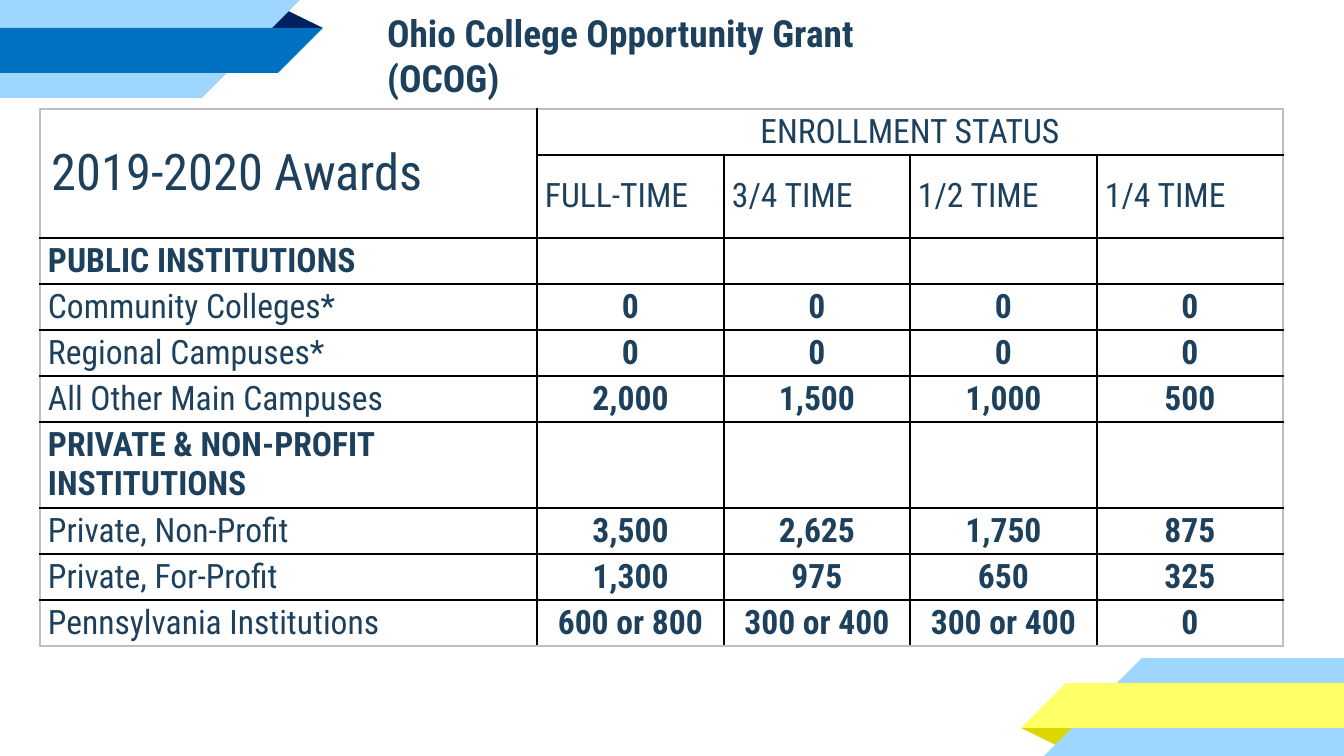
"""Build the Ohio College Opportunity Grant award slide."""
from typing import Any, NamedTuple

import lxml.etree
import pptx
import pptx.dml.color
import pptx.enum.shapes
import pptx.enum.text
import pptx.oxml.ns
import pptx.util

WIDE, HIGH = 1344, 756
SCALE = 9144000 / WIDE
FACE = "Roboto Condensed"
HUES = {"ink": "1D405D", "sky": "9FD6FF", "blue": "0070C0", "navy": "002060",
        "yellow": "FFFF66", "olive": "DBD600", "line": "000000", "edge": "BFBFBF"}
KIND = pptx.enum.shapes.MSO_SHAPE
ALIGN = pptx.enum.text.PP_ALIGN
MIDDLE = pptx.enum.text.MSO_ANCHOR.MIDDLE


class Part(NamedTuple):
    kind: Any
    left: int
    top: int
    width: int
    height: int
    turn: int
    hue: str
    far: str


RIBBON = [
    Part(KIND.ISOSCELES_TRIANGLE, 266, 9, 57, 19, 0, "navy", "olive"),
    Part(KIND.RECTANGLE, 0, 0, 202, 98, 0, "sky", "sky"),
    Part(KIND.RIGHT_TRIANGLE, 202, 0, 98, 98, 90, "sky", "sky"),
    Part(KIND.RECTANGLE, 0, 28, 278, 45, 0, "blue", "yellow"),
    Part(KIND.RIGHT_TRIANGLE, 278, 28, 45, 45, 90, "blue", "yellow"),
]
COLS = [497, 187, 186, 187, 186]
ROWS = [46, 83, 46, 46, 46, 46, 86, 46, 46, 46]
GRANTS = [
    ["", "ENROLLMENT STATUS", "", "", ""],
    ["", "FULL-TIME", "3/4 TIME", "1/2 TIME", "1/4 TIME"],
    ["PUBLIC INSTITUTIONS", "", "", "", ""],
    ["Community Colleges*", "0", "0", "0", "0"],
    ["Regional Campuses*", "0", "0", "0", "0"],
    ["All Other Main Campuses", "2,000", "1,500", "1,000", "500"],
    ["PRIVATE & NON-PROFIT INSTITUTIONS", "", "", "", ""],
    ["Private, Non-Profit", "3,500", "2,625", "1,750", "875"],
    ["Private, For-Profit", "1,300", "975", "650", "325"],
    ["Pennsylvania Institutions", "600 or 800", "300 or 400", "300 or 400", "0"],
]


def px(size: int) -> pptx.util.Emu:
    return pptx.util.Emu(round(size * SCALE))


def tint(name: str) -> pptx.dml.color.RGBColor:
    return pptx.dml.color.RGBColor.from_string(HUES[name])


def apply(item: Any, form: dict[str, Any]) -> None:
    for key, value in form.items():
        setattr(item, key, value)


def write(para: Any, text: str, size: int, bold: bool = False) -> None:
    run = para.add_run()
    run.text = text
    apply(run.font, {"name": FACE, "size": pptx.util.Pt(size), "bold": bold})
    run.font.color.rgb = tint("ink")


def draw(slide: Any, part: Part, far: bool) -> None:
    left, top = part.left, part.top
    if far:
        left, top = WIDE - left - part.width, HIGH - top - part.height
    shape = slide.shapes.add_shape(
        part.kind, px(left), px(top), px(part.width), px(part.height))
    shape.shadow.inherit = False
    shape.rotation = part.turn + 180 * far
    shape.fill.solid()
    shape.fill.fore_color.rgb = tint(part.far if far else part.hue)
    shape.line.fill.background()
    if part.kind == KIND.ISOSCELES_TRIANGLE:
        shape.adjustments[0] = 0.32


def rule(cell: Any, side: str, hue: str) -> None:
    name = pptx.oxml.ns.qn
    line = lxml.etree.SubElement(
        cell._tc.get_or_add_tcPr(), name(f"a:ln{side}"), w=str(pptx.util.Pt(1)))
    fill = lxml.etree.SubElement(line, name("a:solidFill"))
    lxml.etree.SubElement(fill, name("a:srgbClr"), val=HUES[hue])


def dress(cell: Any, row: int, col: int) -> None:
    apply(cell, {"margin_left": px(8), "margin_right": px(8), "margin_top": px(3),
                 "margin_bottom": px(3), "vertical_anchor": MIDDLE})
    outer = {"L": col == 0, "R": col + cell.span_width == len(COLS),
             "T": row == 0, "B": row + cell.span_height == len(ROWS)}
    for side, edge in outer.items():
        rule(cell, side, "edge" if edge else "line")
    cell.fill.background()


def fill(cell: Any, row: int, col: int) -> None:
    text = GRANTS[row][col]
    para = cell.text_frame.paragraphs[0]
    if row == col == 0:
        write(para, " ", 9)
        write(para, "2019-2020 Awards", 27)
    elif text:
        para.alignment = ALIGN.CENTER if col and row != 1 else ALIGN.LEFT
        write(para, text, 18, row > 1 and (col > 0 or text.isupper()))
    else:
        para._p.get_or_add_endParaRPr().set("sz", "1200")


def chart(slide: Any) -> None:
    table = slide.shapes.add_table(
        len(ROWS), len(COLS), px(40), px(109), px(sum(COLS)), px(sum(ROWS))).table
    apply(table, {"first_row": False, "horz_banding": False})
    for col, width in enumerate(COLS):
        table.columns[col].width = px(width)
    for row, height in enumerate(ROWS):
        table.rows[row].height = px(height)
    table.cell(0, 0).merge(table.cell(1, 0))
    table.cell(0, 1).merge(table.cell(0, 4))
    for row in range(len(ROWS)):
        for col in range(len(COLS)):
            cell = table.cell(row, col)
            dress(cell, row, col)
            fill(cell, row, col)


def head(slide: Any) -> None:
    title = slide.shapes.title
    apply(title, {"left": px(374), "top": px(8), "width": px(594), "height": px(94)})
    frame = title.text_frame
    apply(frame, {"word_wrap": True, "vertical_anchor": MIDDLE,
                  "auto_size": pptx.enum.text.MSO_AUTO_SIZE.NONE})
    apply(frame, {f"margin_{side}": px(13) for side in ("left", "right", "top", "bottom")})
    para = frame.paragraphs[0]
    para.alignment = ALIGN.LEFT
    write(para, "Ohio College Opportunity Grant (OCOG)", 20, True)


def main() -> None:
    deck = pptx.Presentation()
    apply(deck, {"slide_width": px(WIDE), "slide_height": px(HIGH)})
    slide = deck.slides.add_slide(deck.slide_layouts[5])
    for far in (True, False):
        for part in RIBBON:
            draw(slide, part, far)
    head(slide)
    chart(slide)
    deck.save("out.pptx")


if __name__ == "__main__":
    main()
